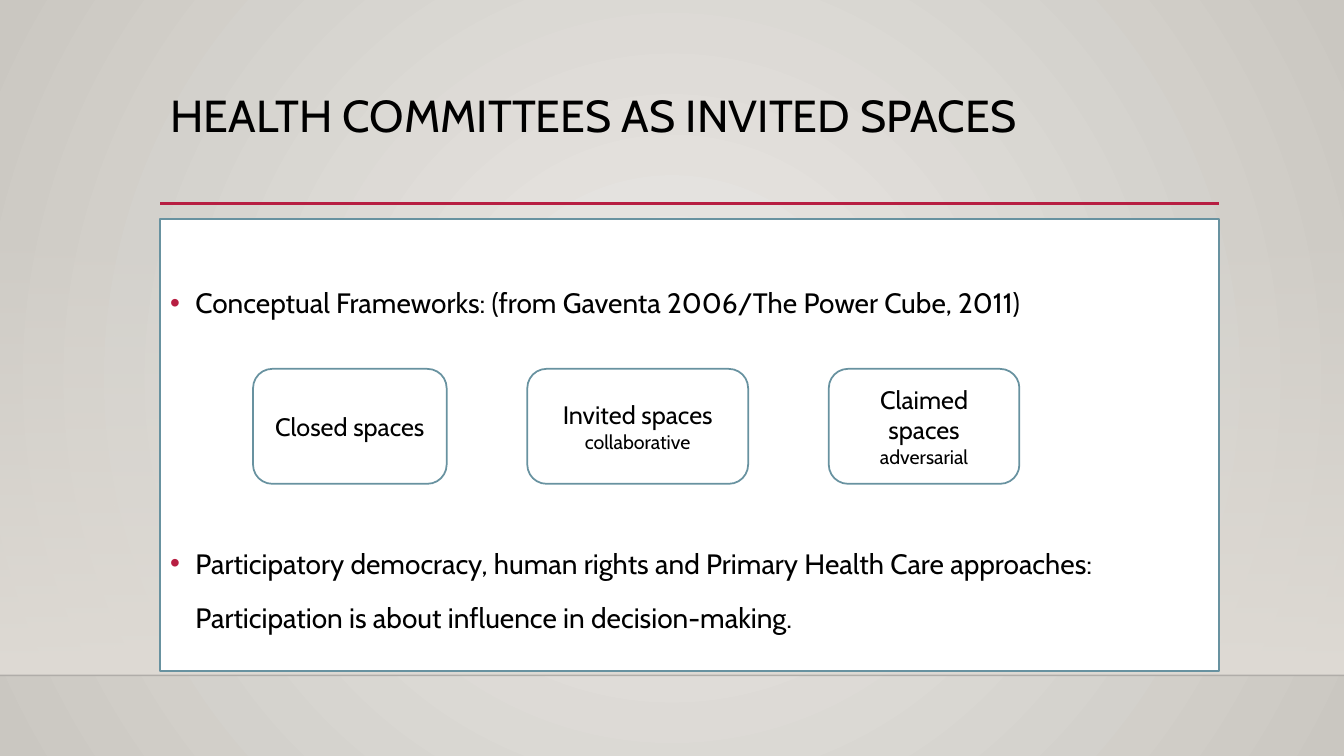
import pptx
import pptx.util
import pptx.dml.color
import pptx.enum.shapes
import pptx.enum.text
import pptx.oxml.ns
from lxml import etree

Inches = pptx.util.Inches
Pt = pptx.util.Pt
qn = pptx.oxml.ns.qn
SHAPE = pptx.enum.shapes.MSO_SHAPE
ANCHOR = pptx.enum.text.MSO_ANCHOR
ALIGN = pptx.enum.text.PP_ALIGN

FONT = "Cabin"
BLACK, WHITE, RED, TEAL = "000000", "FFFFFF", "B71E42", "6892A0"


def color(code):
    return pptx.dml.color.RGBColor.from_string(code)


def add(parent, tag, **attrs):
    return etree.SubElement(parent, qn(tag), attrs)


def blend(fill, root, stops, round=False):
    """Fill with a gradient of (place, colour, opacity) stops, circular or downward."""
    fill.gradient()
    grad = next(root.iter(qn("a:gradFill")))
    for child in list(grad):
        grad.remove(child)
    group = add(grad, "a:gsLst")
    for place, code, alpha in stops:
        stop = add(group, "a:gs", pos=str(place * 1000))
        tint = add(stop, "a:srgbClr", val=code)
        add(tint, "a:alpha", val=str(alpha * 1000))
    if round:
        way = add(grad, "a:path", path="circle")
        add(way, "a:fillToRect", l="50000", t="50000", r="50000", b="50000")
    else:
        add(grad, "a:lin", ang="5400000", scaled="0")


def add_rule(slide, left, top, width, code, weight):
    rule = slide.shapes.add_connector(
        pptx.enum.shapes.MSO_CONNECTOR.STRAIGHT,
        Inches(left), Inches(top), Inches(left + width), Inches(top))
    rule.line.color.rgb = color(code)
    rule.line.width = Pt(weight)
    add(rule._element.spPr, "a:effectLst")
    return rule


def add_box(slide, kind, left, top, width, height):
    box = slide.shapes.add_shape(
        kind, Inches(left), Inches(top), Inches(width), Inches(height))
    box.shadow.inherit = False
    box.fill.solid()
    box.fill.fore_color.rgb = color(WHITE)
    box.line.color.rgb = color(TEAL)
    box.line.width = Pt(1.25)
    box.text_frame.word_wrap = True
    return box


def add_run(para, text, size):
    run = para.add_run()
    run.text = text
    run.font.name = FONT
    run.font.size = Pt(size)
    run.font.color.rgb = color(BLACK)


def add_backdrop(slide, width, top, height):
    blend(slide.background.fill, slide._element,
          [(0, "ECEAE7", 100), (100, "CAC7C1", 100)], round=True)
    wall = add_box(slide, SHAPE.RECTANGLE, 0, top, width, height)
    wall.line.fill.background()
    blend(wall.fill, wall._element, [(0, "DFDBD5", 0), (100, "DFDBD5", 100)])
    floor = add_rule(slide, 0, top + height, width, "000001", 1)
    tint = next(floor._element.spPr.iter(qn("a:srgbClr")))
    add(tint, "a:alpha", val="20000")


def add_title(slide, text, left, top, width, height):
    add_rule(slide, left, top + height, width, RED, 2.5)
    box = slide.shapes.add_textbox(
        Inches(left), Inches(top), Inches(width), Inches(height))
    box.text_frame.word_wrap = True
    para = box.text_frame.paragraphs[0]
    para.line_spacing = 0.9
    add_run(para, text, 32)


def add_panel(slide, items, left, top, width, height):
    """Place a framed list of (text, bulleted, space before) items."""
    panel = add_box(slide, SHAPE.RECTANGLE, left, top, width, height)
    frame = panel.text_frame
    frame.vertical_anchor = ANCHOR.TOP
    frame.margin_top = Inches(0.6)
    for i, (text, dot, gap) in enumerate(items):
        para = frame.add_paragraph() if i else frame.paragraphs[0]
        para.alignment = ALIGN.LEFT
        para.line_spacing = 1.2
        para.space_before = Pt(gap)
        props = para._p.get_or_add_pPr()
        props.set("marL", str(Inches(0.25)))
        props.set("indent", str(-Inches(0.25) if dot else 0))
        if dot:
            add(add(props, "a:buClr"), "a:srgbClr", val=RED)
            add(props, "a:buFont", typeface="Arial")
            add(props, "a:buChar", char="•")
        add_run(para, text, 20)


def add_spaces(slide, cards, top, height):
    """Place a row of rounded cards of (left, width, name, note)."""
    for left, width, name, note in cards:
        card = add_box(slide, SHAPE.ROUNDED_RECTANGLE, left, top, width, height)
        frame = card.text_frame
        frame.vertical_anchor = ANCHOR.MIDDLE
        para = frame.paragraphs[0]
        para.alignment = ALIGN.CENTER
        add_run(para, name, 18)
        if note:
            para = frame.add_paragraph()
            para.alignment = ALIGN.CENTER
            add_run(para, note, 14)


def main():
    deck = pptx.Presentation()
    deck.slide_width, deck.slide_height = Inches(13.33), Inches(7.5)
    slide = deck.slides.add_slide(deck.slide_layouts[6])
    add_backdrop(slide, 13.33, 2.21, 4.49)
    add_title(slide, "HEALTH COMMITTEES AS INVITED SPACES", 1.59, 0.88, 10.5, 1.14)
    add_panel(slide, [
        ("Conceptual Frameworks: (from Gaventa 2006/The Power Cube, 2011)", True, 0),
        ("Participatory democracy, human rights and Primary Health Care approaches:",
         True, 157),
        ("Participation is about influence in decision-making.", False, 10),
    ], 1.59, 2.17, 10.5, 4.49)
    add_spaces(slide, [
        (2.51, 1.92, "Closed spaces", ""),
        (5.23, 2.19, "Invited spaces", "collaborative"),
        (8.22, 1.89, "Claimed spaces", "adversarial"),
    ], 3.66, 1.14)
    deck.save("out.pptx")


if __name__ == "__main__":
    main()
